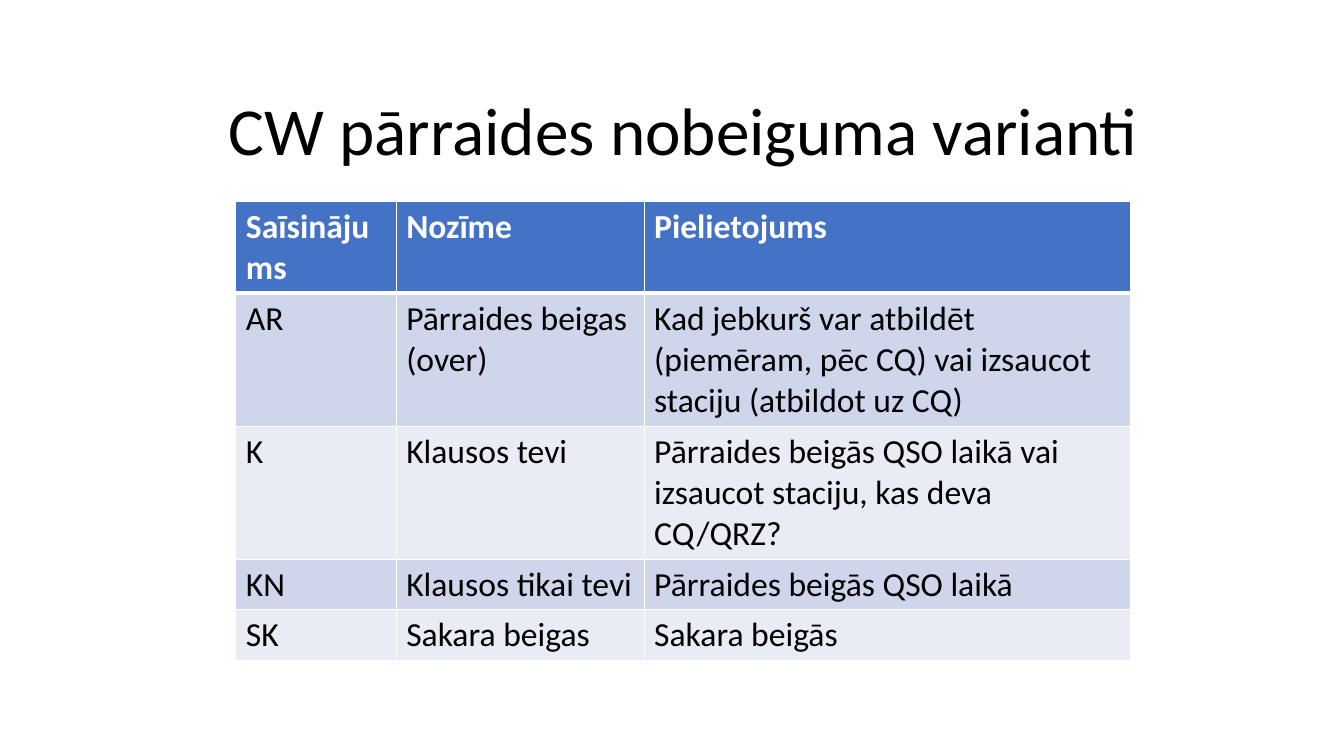
"""Draw a slide with a table of the ways to end a CW transmission."""
from typing import NamedTuple

from lxml.etree import SubElement as Sub
from pptx import Presentation as Deck
from pptx.dml.color import RGBColor as Color
from pptx.enum.text import MSO_ANCHOR as Anchor, PP_ALIGN as Align
from pptx.oxml.ns import qn
from pptx.util import Inches, Pt

WIDE, HIGH = Inches(13.33), Inches(7.5)
FONT = "Calibri"
BLACK = Color(0x00, 0x00, 0x00)
WHITE = Color(0xFF, 0xFF, 0xFF)
BLUE = Color(0x44, 0x72, 0xC4)
MID = Color(0xCF, 0xD5, 0xEA)
PALE = Color(0xE9, 0xEB, 0xF5)
THIN, THICK = Pt(0.96), Pt(3)


class Box(NamedTuple):
    left: float
    top: float
    width: float
    height: float


class Look(NamedTuple):
    fill: Color
    ink: Color
    bold: bool
    base: int


class Row(NamedTuple):
    height: float
    look: Look
    texts: tuple[str, str, str]


HEAD = Look(BLUE, WHITE, True, THICK)
ODD = Look(MID, BLACK, False, THIN)
EVEN = Look(PALE, BLACK, False, THIN)

TITLE = Box(13.35, 10.8, 75, 12.4)
LEFT, TOP = 17.55, 26.67
COLS = (11.93, 18.45, 36.23)
ROWS = (
    Row(12.13, HEAD, ("Saīsinājums", "Nozīme", "Pielietojums")),
    Row(17.6, ODD, ("AR", "Pārraides beigas (over)",
                    "Kad jebkurš var atbildēt (piemēram, pēc CQ) vai izsaucot "
                    "staciju (atbildot uz CQ)")),
    Row(17.6, EVEN, ("K", "Klausos tevi",
                     "Pārraides beigās QSO laikā vai izsaucot staciju, kas deva "
                     "CQ/QRZ?")),
    Row(6.67, ODD, ("KN", "Klausos tikai tevi", "Pārraides beigās QSO laikā")),
    Row(6.67, EVEN, ("SK", "Sakara beigas", "Sakara beigās")),
)


def across(share: float) -> int:
    """Turn a percentage of the slide width into a length."""
    return round(WIDE * share / 100)


def down(share: float) -> int:
    """Turn a percentage of the slide height into a length."""
    return round(HIGH * share / 100)


def place(box: Box) -> tuple[int, int, int, int]:
    """Turn a box of percentages into lengths."""
    return across(box.left), down(box.top), across(box.width), down(box.height)


def write(para, text: str, size: int, ink: Color, bold: bool = False) -> None:
    """Add one styled run to a paragraph."""
    run = para.add_run()
    run.text = text
    font = run.font
    font.name, font.size, font.bold = FONT, Pt(size), bold
    font.color.rgb = ink


def edge(cell, side: str, width: int) -> None:
    """Draw one white border of a cell."""
    line = Sub(cell._tc.get_or_add_tcPr(), qn(f"a:ln{side}"), w=str(int(width)))
    Sub(Sub(line, qn("a:solidFill")), qn("a:srgbClr"), val=str(WHITE))


def paint(cell, text: str, look: Look, top: int) -> None:
    """Give a cell its borders, fill and text."""
    for side, width in (("L", THIN), ("R", THIN), ("T", top), ("B", look.base)):
        edge(cell, side, width)
    cell.fill.solid()
    cell.fill.fore_color.rgb = look.fill
    write(cell.text_frame.paragraphs[0], text, 24, look.ink, look.bold)


def add_title(slide) -> None:
    """Add the slide title."""
    frame = slide.shapes.add_textbox(*place(TITLE)).text_frame
    frame.word_wrap = True
    frame.vertical_anchor = Anchor.BOTTOM
    para = frame.paragraphs[0]
    para.alignment = Align.CENTER
    para.line_spacing = 0.9
    write(para, "CW pārraides nobeiguma varianti", 48, BLACK)


def add_grid(slide) -> None:
    """Add the table of endings."""
    box = Box(LEFT, TOP, sum(COLS), sum(row.height for row in ROWS))
    grid = slide.shapes.add_table(len(ROWS), len(COLS), *place(box)).table
    for col, width in zip(grid.columns, COLS):
        col.width = across(width)
    top = THIN
    for line, row in zip(grid.rows, ROWS):
        line.height = down(row.height)
        for cell, text in zip(line.cells, row.texts):
            paint(cell, text, row.look, top)
        top = row.look.base


def main() -> None:
    """Build and save the deck."""
    deck = Deck()
    deck.slide_width, deck.slide_height = WIDE, HIGH
    slide = deck.slides.add_slide(deck.slide_layouts[6])
    add_title(slide)
    add_grid(slide)
    deck.save("out.pptx")


if __name__ == "__main__":
    main()
